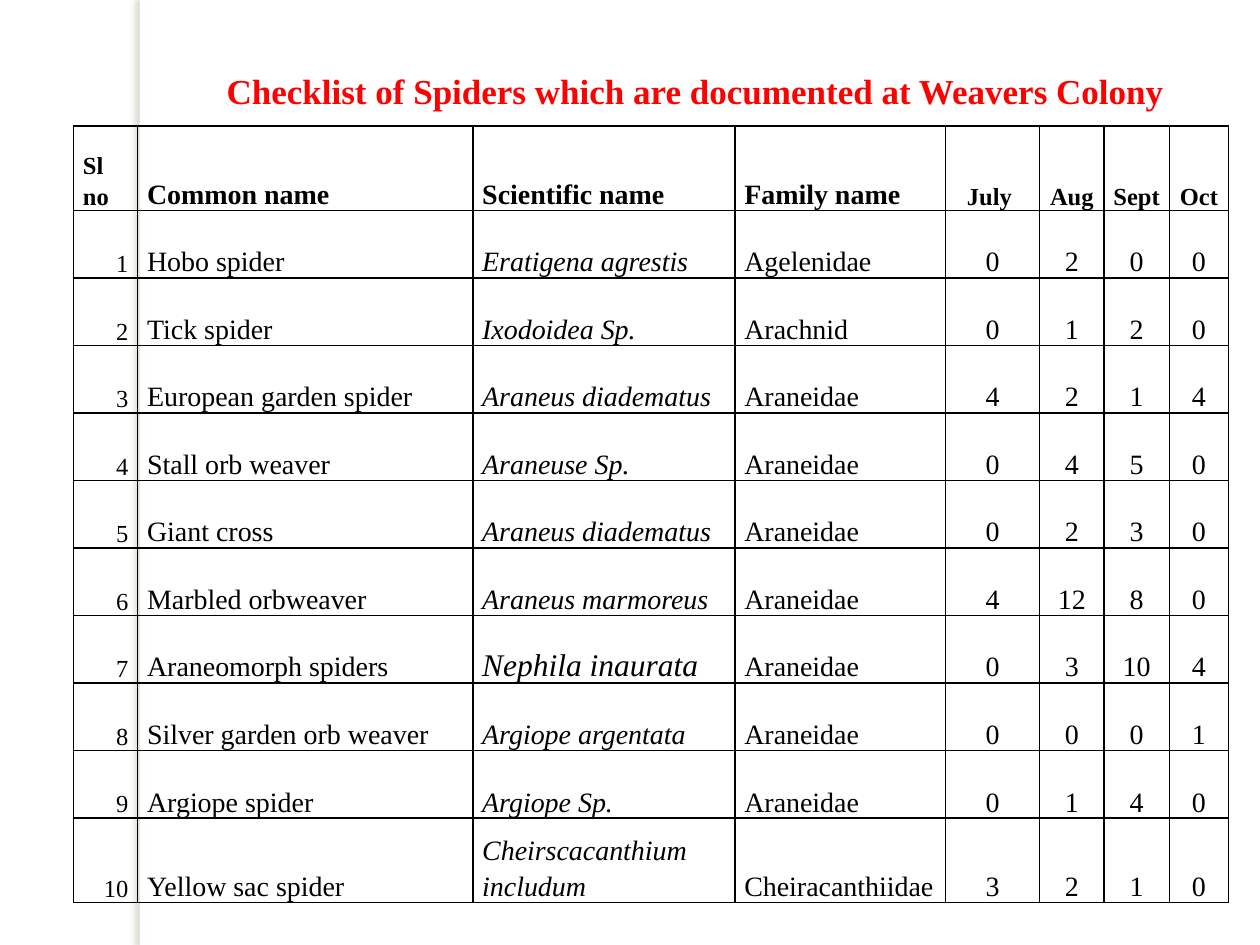
from lxml import etree
from pptx import Presentation
from pptx.dml.color import RGBColor
from pptx.enum.shapes import MSO_SHAPE
from pptx.enum.text import MSO_ANCHOR, MSO_AUTO_SIZE, PP_ALIGN
from pptx.oxml.ns import qn
from pptx.util import Pt

LEFT, CENTER, RIGHT = PP_ALIGN.LEFT, PP_ALIGN.CENTER, PP_ALIGN.RIGHT
MIDDLE, BOTTOM = MSO_ANCHOR.MIDDLE, MSO_ANCHOR.BOTTOM
FIT_SHAPE = MSO_AUTO_SIZE.SHAPE_TO_FIT_TEXT
RECTANGLE = MSO_SHAPE.RECTANGLE

COLORS = {
    "white": "FFFFFF",
    "black": "000000",
    "title": "FF0000",
    "outline": "7030A0",
    "shadow": "7F7D63",
}
FONT = "Times New Roman"
TITLE = "Checklist of Spiders which are documented at Weavers Colony"
COLUMN_WIDTHS = [36.7, 191.5, 149.8, 120.2, 54, 36.7, 37.4, 33.8]
END_ROW, MID_ROW = 48.3, 38.6
CELL_FORMAT = {
    "vertical_anchor": BOTTOM,
    "margin_left": Pt(5.4),
    "margin_right": Pt(5.4),
    "margin_top": 0,
    "margin_bottom": 0,
}
HEADERS = ["Sl no", "Common name", "Scientific name", "Family name",
           "July ", "Aug ", "Sept ", "Oct "]
SPIDERS = [
    ("Hobo spider", "Eratigena agrestis", "Agelenidae", 0, 2, 0, 0),
    ("Tick spider", "Ixodoidea Sp.", "Arachnid", 0, 1, 2, 0),
    ("European garden spider", "Araneus diadematus", "Araneidae", 4, 2, 1, 4),
    ("Stall orb weaver", "Araneuse Sp.", "Araneidae", 0, 4, 5, 0),
    ("Giant cross", "Araneus diadematus", "Araneidae", 0, 2, 3, 0),
    ("Marbled orbweaver", "Araneus marmoreus", "Araneidae", 4, 12, 8, 0),
    ("Araneomorph spiders", "Nephila inaurata", "Araneidae", 0, 3, 10, 4),
    ("Silver garden orb weaver", "Argiope argentata", "Araneidae", 0, 0, 0, 1),
    ("Argiope spider", "Argiope Sp.", "Araneidae", 0, 1, 4, 0),
    ("Yellow sac spider", "Cheirscacanthium includum", "Cheiracanthiidae", 3, 2, 1, 0),
]


def set_format(obj, values):
    for name, value in values.items():
        setattr(obj, name, value)


def write(tf, text, color, align=LEFT, spacing=1.0, **font):
    p = tf.paragraphs[0]
    set_format(p, {"alignment": align, "line_spacing": spacing})
    r = p.add_run()
    r.text = text
    set_format(r.font, {"name": FONT, **font})
    r.font.color.rgb = RGBColor.from_string(COLORS[color])
    return r


def add_color(parent, color):
    fill = etree.SubElement(parent, qn("a:solidFill"))
    return etree.SubElement(fill, qn("a:srgbClr"), val=COLORS[color])


def insert_line(parent, index, tag, color, width):
    ln = etree.Element(qn(tag), w=str(Pt(width)))
    add_color(ln, color)
    parent.insert(index, ln)


def add_side_strip(s):
    sp = s.shapes.add_shape(RECTANGLE, Pt(80), 0, Pt(5.8), Pt(540))
    sp.fill.solid()
    sp.fill.fore_color.rgb = RGBColor.from_string(COLORS["white"])
    sp.line.fill.background()
    sp.shadow.inherit = False
    effects = sp.fill._xPr.find(qn("a:effectLst"))
    shadow = etree.SubElement(effects, qn("a:outerShdw"), blurRad=str(Pt(3)),
                              dist=str(Pt(3)), dir="10800000", rotWithShape="0")
    clr = etree.SubElement(shadow, qn("a:srgbClr"), val=COLORS["shadow"])
    etree.SubElement(clr, qn("a:alpha"), val="25000")


def add_title(s):
    tf = s.shapes.add_textbox(Pt(120.2), Pt(36), Pt(554.4), Pt(31.7)).text_frame
    set_format(tf, {"word_wrap": False, "auto_size": FIT_SHAPE,
                    "vertical_anchor": MIDDLE})
    r = write(tf, TITLE, "title", CENTER, size=Pt(20), bold=True)
    insert_line(r.font._element, 0, "a:ln", "outline", 0.75)


def cell_style(row, col, text):
    size = 16
    if col == 0 or (row == 0 and col > 3):
        size = 14
    elif text == "Nephila inaurata":
        size = 18
    if col > 3:
        align = CENTER
    else:
        align = RIGHT if row and col == 0 else LEFT
    return {"align": align, "size": Pt(size), "bold": row == 0,
            "italic": row > 0 and col == 2}


def fill_cell(cell, row, col, text):
    set_format(cell, CELL_FORMAT)
    cell.fill.background()
    for i, side in enumerate("LRTB"):
        insert_line(cell.fill._xPr, i, f"a:ln{side}", "black", 1)
    write(cell.text_frame, text, "black", spacing=1.15, **cell_style(row, col, text))


def add_checklist(s):
    rows = [HEADERS] + [(n, *spider) for n, spider in enumerate(SPIDERS, 1)]
    heights = [END_ROW] + [MID_ROW] * (len(rows) - 2) + [END_ROW]
    table = s.shapes.add_table(len(rows), len(HEADERS), Pt(42), Pt(72),
                               Pt(sum(COLUMN_WIDTHS)), Pt(sum(heights))).table
    set_format(table, {"first_row": False, "horz_banding": False})
    for column, width in zip(table.columns, COLUMN_WIDTHS):
        column.width = Pt(width)
    for i, (values, height) in enumerate(zip(rows, heights)):
        table.rows[i].height = Pt(height)
        for j, value in enumerate(values):
            fill_cell(table.cell(i, j), i, j, str(value))


def main():
    prs = Presentation()
    set_format(prs, {"slide_width": Pt(720), "slide_height": Pt(540)})
    s = prs.slides.add_slide(prs.slide_layouts[6])
    add_side_strip(s)
    add_title(s)
    add_checklist(s)
    prs.save("out.pptx")


if __name__ == "__main__":
    main()
